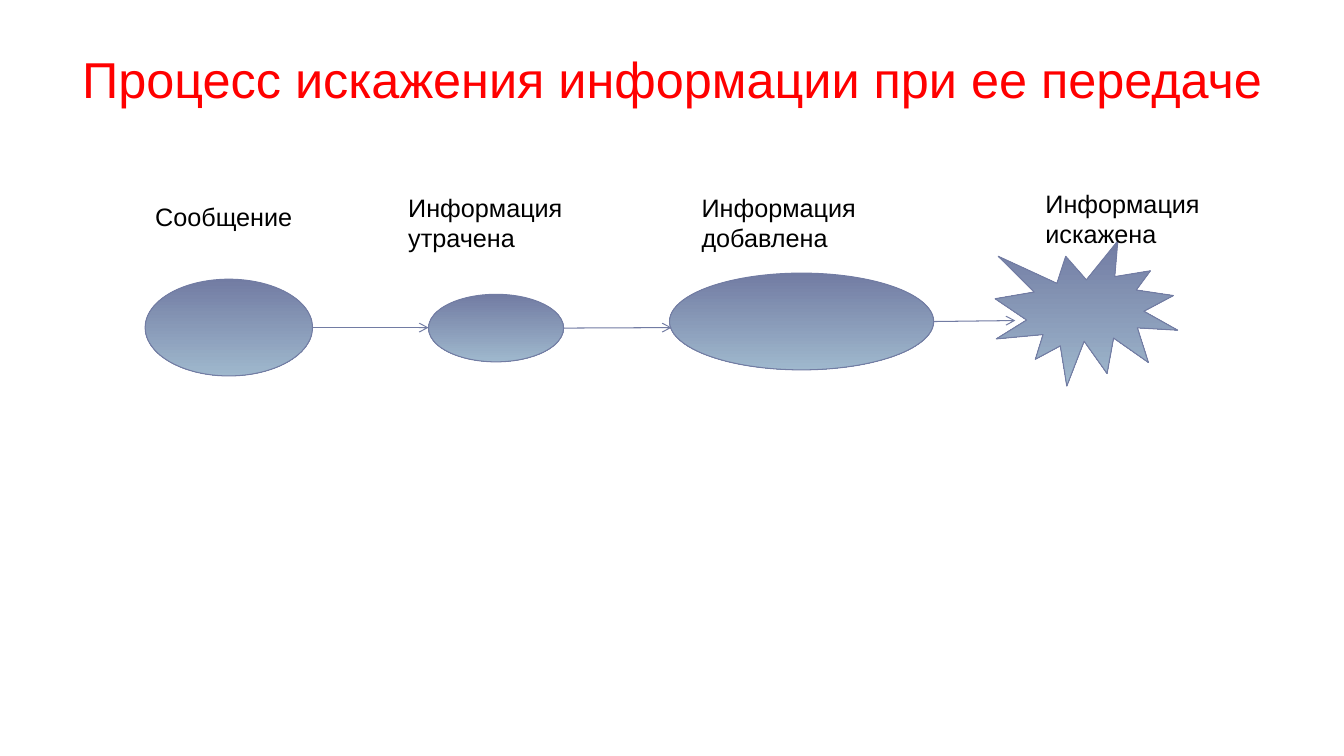
import pptx
import pptx.util
import pptx.dml.color
import pptx.enum.shapes
import pptx.enum.text
import pptx.oxml
import pptx.oxml.ns

# Content: label and its box, figure kind and its box (left, top, width, height)
TITLE = ("Процесс искажения информации при ее передаче", (0.67, 0.21, 12, 1.13))
STAGES = [
    ("Сообщение", (1.44, 1.95, 1.61, 0.4), "OVAL", (1.44, 2.77, 1.66, 0.96)),
    ("Информация утрачена", (3.95, 1.86, 1.85, 0.71), "OVAL", (4.25, 2.92, 1.34, 0.67)),
    ("Информация добавлена", (6.86, 1.86, 2.16, 0.71), "OVAL", (6.64, 2.71, 2.62, 0.96)),
    ("Информация искажена", (10.27, 1.82, 1.95, 0.71), "EXPLOSION1", (9.87, 2.39, 1.81, 1.44)),
]
# Where each arrow's tip lands: reach into the next figure, and height
TIPS = [(0, 3.25), (0.02, 3.25), (0.2, 3.18)]
COLORS = {"title": "FF0000", "text": "000000", "dark": "727CA3", "light": "9FB8CD"}
TYPES = {
    "title": {"name": "Arial", "size": pptx.util.Pt(36)},
    "text": {"name": "Arial", "size": pptx.util.Pt(18)},
}
SHAPES = pptx.enum.shapes.MSO_SHAPE
ALIGN = pptx.enum.text.PP_ALIGN
ANCHOR = pptx.enum.text.MSO_ANCHOR


def inches(nums):
    return [pptx.util.Inches(num) for num in nums]


def color(key):
    return pptx.dml.color.RGBColor.from_string(COLORS[key])


def write(slide, text, box, kind, align, anchor):
    frame = slide.shapes.add_textbox(*inches(box)).text_frame
    frame.word_wrap = True
    frame.vertical_anchor = anchor
    par = frame.paragraphs[0]
    par.alignment = align
    run = par.add_run()
    run.text = text
    for name, value in TYPES[kind].items():
        setattr(run.font, name, value)
    run.font.color.rgb = color(kind)


def outline(item):
    item.line.color.rgb = color("dark")
    item.line.width = pptx.util.Pt(0.75)


def figure(slide, kind, box):
    item = slide.shapes.add_shape(getattr(SHAPES, kind), *inches(box))
    item.shadow.inherit = False
    item.fill.gradient()
    item.fill.gradient_angle = 270
    for stop, key, spot in zip(item.fill.gradient_stops, ("dark", "light"), (0, 1)):
        stop.color.rgb = color(key)
        stop.position = spot
    outline(item)


def arrow(slide, start, end):
    link = slide.shapes.add_connector(
        pptx.enum.shapes.MSO_CONNECTOR.STRAIGHT, *inches(start + end))
    outline(link)
    qn = pptx.oxml.ns.qn
    head = link.line._get_or_add_ln().makeelement(qn("a:tailEnd"), {"type": "arrow"})
    link.line._get_or_add_ln().append(head)
    props = link._element.spPr
    props.append(props.makeelement(qn("a:effectLst"), {}))


def main():
    deck = pptx.Presentation()
    deck.slide_width, deck.slide_height = inches((13.33, 7.5))
    slide = deck.slides.add_slide(deck.slide_layouts[6])

    # Title
    write(slide, *TITLE, "title", ALIGN.CENTER, ANCHOR.MIDDLE)

    # Figures
    for _, _, kind, box in STAGES:
        figure(slide, kind, box)

    # Arrows from the right side of each figure to the next
    for here, after, (reach, level) in zip(STAGES, STAGES[1:], TIPS):
        left, top, width, height = here[3]
        arrow(slide, (left + width, top + height / 2), (after[3][0] + reach, level))

    # Labels
    for text, box, _, _ in STAGES:
        write(slide, text, box, "text", ALIGN.LEFT, ANCHOR.TOP)

    deck.save("out.pptx")


if __name__ == "__main__":
    main()
